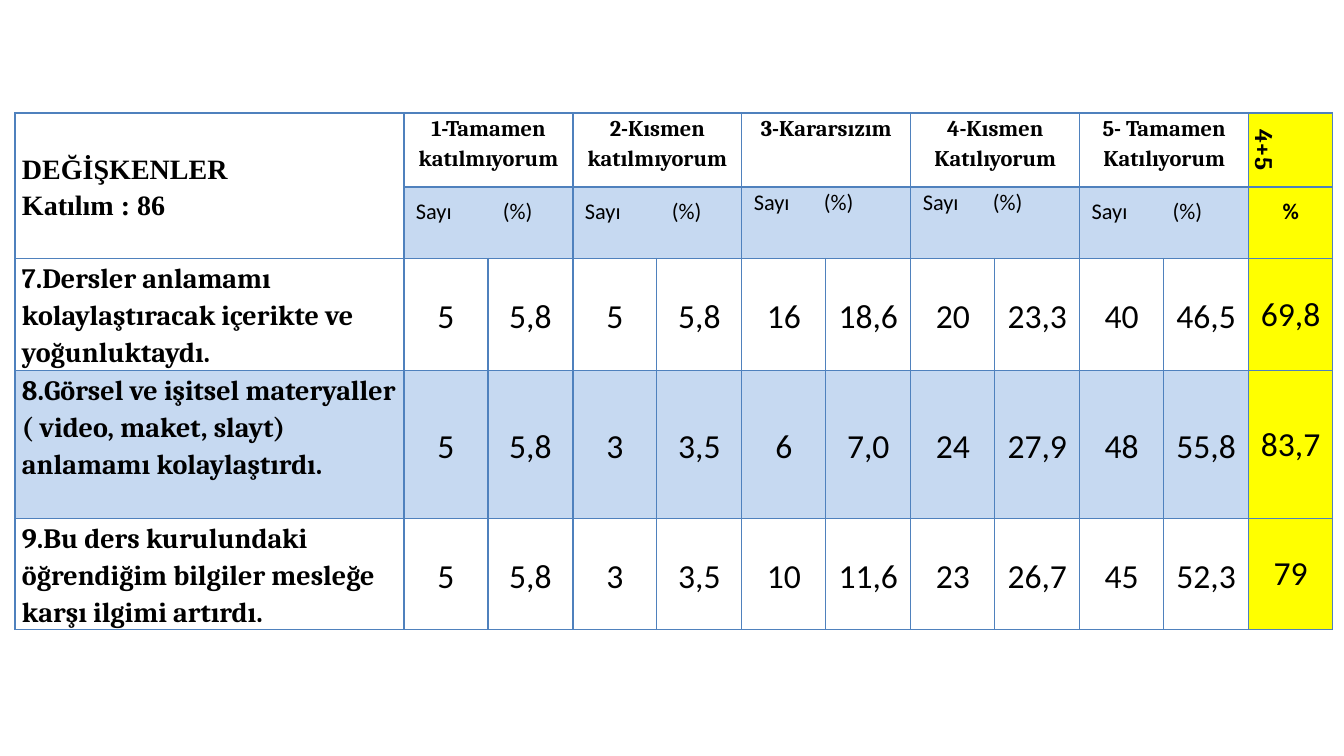
import pptx
import pptx.dml.color
import pptx.enum.text
import pptx.oxml
import pptx.oxml.ns
import pptx.util

PX = 914400 / 100.8
COLORS = {"text": "000000", "line": "4F81BD", "plain": "FFFFFF",
          "band": "C6D9F1", "total": "FFFF00"}
ALIGN = pptx.enum.text.PP_ALIGN
ANCHOR = pptx.enum.text.MSO_ANCHOR

# Answer groups: heading, tab position of "(%)", bottom inset of the subheading
GROUPS = [("1-Tamamen katılmıyorum", 87, 12),
          ("2-Kısmen katılmıyorum", 87, 12),
          ("3-Kararsızım", 70, 30),
          ("4-Kısmen Katılıyorum", 70, 30),
          ("5- Tamamen Katılıyorum", 81, 12)]
QUESTIONS = [
    ("7.Dersler anlamamı kolaylaştıracak içerikte ve yoğunluktaydı.",
     ["5", "5,8", "5", "5,8", "16", "18,6", "20", "23,3", "40", "46,5"], "69,8"),
    ("8.Görsel ve işitsel materyaller ( video, maket, slayt) anlamamı kolaylaştırdı.",
     ["5", "5,8", "3", "3,5", "6", "7,0", "24", "27,9", "48", "55,8"], "83,7"),
    ("9.Bu ders kurulundaki öğrendiğim bilgiler mesleğe karşı ilgimi artırdı.",
     ["5", "5,8", "3", "3,5", "10", "11,6", "23", "26,7", "45", "52,3"], "79"),
]
COLUMNS = [389] + [84, 85] * 5 + [84]
ROWS = [74, 71, 112, 148, 111]
TOTAL = len(COLUMNS) - 1


def px(length):
    return pptx.util.Emu(round(length * PX))


def element(xml):
    return pptx.oxml.parse_xml(xml.replace(" ", f" {pptx.oxml.ns.nsdecls('a')} ", 1))


class SurveySlide:
    def __init__(self, deck):
        self.slide = deck.slides.add_slide(deck.slide_layouts[6])

    def table(self, left, top, columns, rows):
        frame = self.slide.shapes.add_table(len(rows), len(columns), px(left), px(top),
                                            px(sum(columns)), px(sum(rows)))
        table = frame.table
        table.first_row = table.horz_banding = False
        for column, width in zip(table.columns, columns):
            column.width = px(width)
        for row, height in zip(table.rows, rows):
            row.height = px(height)
        return table

    def borders(self, cell, fill, top=1, bottom=1):
        properties = cell._tc.get_or_add_tcPr()
        for side, points in (("L", 1), ("R", 1), ("T", top), ("B", bottom)):
            properties.append(element(
                f'<a:ln{side} w="{int(points * 12700)}"><a:solidFill>'
                f'<a:srgbClr val="{COLORS["line"]}"/></a:solidFill></a:ln{side}>'))
        cell.fill.solid()
        cell.fill.fore_color.rgb = pptx.dml.color.RGBColor.from_string(COLORS[fill])

    def text(self, cell, lines, size, font, bold=True, align=ALIGN.CENTER,
             anchor=ANCHOR.MIDDLE, spacing=1.15, insets=(7, 0, 7, 0)):
        cell.vertical_anchor = anchor
        (cell.margin_left, cell.margin_top,
         cell.margin_right, cell.margin_bottom) = map(px, insets)
        frame = cell.text_frame
        for index, line in enumerate(lines):
            paragraph = frame.add_paragraph() if index else frame.paragraphs[0]
            paragraph.alignment = align
            paragraph.line_spacing = spacing
            run = paragraph.add_run()
            run.text = line
            run.font.size = pptx.util.Pt(size)
            run.font.name = font
            run.font.bold = bold
            run.font.color.rgb = pptx.dml.color.RGBColor.from_string(COLORS["text"])

    def tab_stop(self, cell, position):
        properties = cell.text_frame.paragraphs[0]._p.get_or_add_pPr()
        properties.append(element(
            f'<a:tabLst ><a:tab pos="{px(position)}" algn="l"/></a:tabLst>'))


def main():
    deck = pptx.Presentation()
    deck.slide_width, deck.slide_height = px(1344), px(756)
    survey = SurveySlide(deck)
    results = survey.table(15, 113, COLUMNS, ROWS)

    # Cell fills and borders, with a thick rule between the two heading rows
    for row in range(len(ROWS)):
        for column in range(len(COLUMNS)):
            banded = row == 3 or (row == 1 and column > 0)
            fill = "total" if column == TOTAL else "band" if banded else "plain"
            survey.borders(results.cell(row, column), fill,
                           top=2.25 if row == 1 and column else 1,
                           bottom=2.25 if row == 0 and column else 1)

    # Headings
    variables = results.cell(0, 0)
    variables.merge(results.cell(1, 0))
    survey.text(variables, ["DEĞİŞKENLER", "Katılım : 86"], 20, "Times New Roman",
                align=ALIGN.LEFT)
    exact = pptx.util.Pt(13)
    for index, (answer, tab, bottom) in enumerate(GROUPS):
        column = 1 + 2 * index
        heading, subheading = results.cell(0, column), results.cell(1, column)
        heading.merge(results.cell(0, column + 1))
        subheading.merge(results.cell(1, column + 1))
        survey.text(heading, [answer], 16, "Cambria", anchor=ANCHOR.TOP)
        survey.text(subheading, ["Sayı\t(%)"], 16, "Calibri", bold=False,
                    align=ALIGN.LEFT, spacing=exact, insets=(12, 0, 7, bottom))
        survey.tab_stop(subheading, tab)
    agreement = results.cell(0, TOTAL)
    survey.text(agreement, ["4+5"], 18, "Cambria", anchor=ANCHOR.TOP)
    agreement._tc.get_or_add_tcPr().set("vert", "vert")
    survey.text(results.cell(1, TOTAL), ["%"], 16, "Calibri", spacing=exact,
                insets=(7, 0, 7, 12))

    # Questions and their results
    for row, (question, values, total) in enumerate(QUESTIONS, start=2):
        survey.text(results.cell(row, 0), [question], 20, "Cambria",
                    align=ALIGN.LEFT, anchor=ANCHOR.TOP)
        for column, value in enumerate(values, start=1):
            survey.text(results.cell(row, column), [value], 24, "Calibri", bold=False)
        survey.text(results.cell(row, TOTAL), [total], 24, "Calibri", bold=False,
                    spacing=1.0, insets=(1, 1, 1, 0))

    deck.save("out.pptx")


if __name__ == "__main__":
    main()
